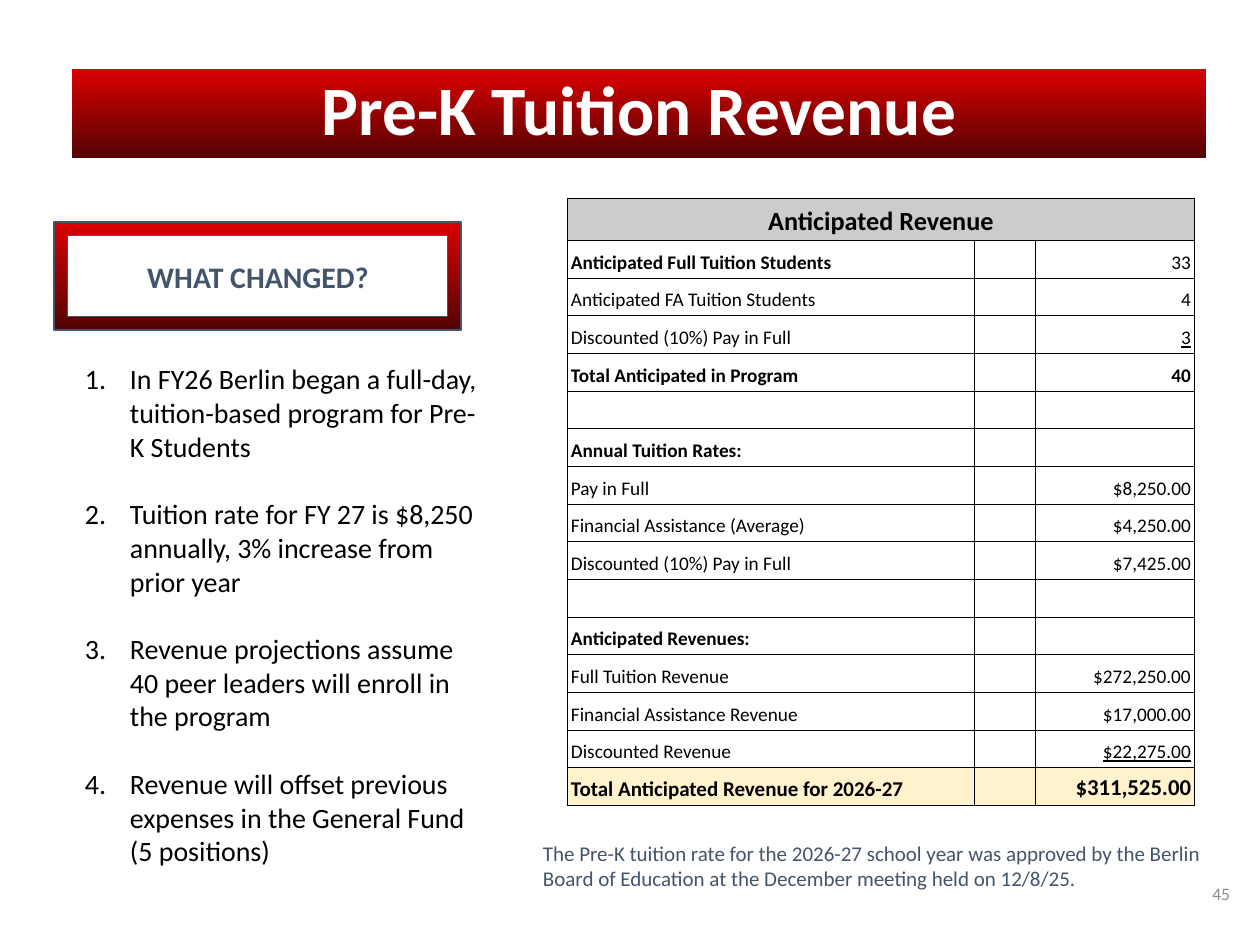
import pptx
import pptx.util
import pptx.dml.color
import pptx.enum.shapes
import pptx.enum.text
import pptx.oxml
import pptx.oxml.ns

PX = 914400 // 126  # EMU in one px
COLORS = {"red": "DB0000", "maroon": "540303", "white": "FFFFFF", "black": "000000",
          "slate": "44546A", "gray": "8C8C8C", "header": "CCCCCC", "total": "FFF2CC"}
NS = pptx.oxml.ns.nsdecls("a")
ALIGN = pptx.enum.text.PP_ALIGN
ANCHOR = pptx.enum.text.MSO_ANCHOR
Pt = pptx.util.Pt
rgb = pptx.dml.color.RGBColor.from_string


def add_run(p, text, size, color, bold=False, underline=False):
    r = p.add_run()
    r.text = text
    r.font.name = "Calibri"
    r.font.size = Pt(size)
    r.font.bold = bold
    r.font.underline = underline
    r.font.color.rgb = rgb(COLORS[color])


def add_box(s, left, top, width, height, anchor=ANCHOR.TOP):
    tf = s.shapes.add_textbox(left * PX, top * PX, width * PX, height * PX).text_frame
    tf.word_wrap = True
    tf.vertical_anchor = anchor
    tf.margin_left = tf.margin_right = tf.margin_top = tf.margin_bottom = 13 * PX
    return tf


prs = pptx.Presentation()
prs.slide_width = 1260 * PX
prs.slide_height = 945 * PX
s = prs.slides.add_slide(prs.slide_layouts[5])

# Title
title = s.shapes.title
title.left, title.top, title.width, title.height = [v * PX for v in (72, 69, 1134, 89)]
tf = title.text_frame
tf.auto_size = pptx.enum.text.MSO_AUTO_SIZE.NONE
tf.vertical_anchor = ANCHOR.MIDDLE
p = tf.paragraphs[0]
p.alignment = ALIGN.CENTER
p.line_spacing = 0.9
add_run(p, "Pre-K Tuition Revenue", 39.6, "white", bold=True)

# Frame around the heading
frame = s.shapes.add_shape(pptx.enum.shapes.MSO_SHAPE.FRAME,
                           54 * PX, 222 * PX, 407 * PX, 108 * PX)
frame.shadow.inherit = False
frame.adjustments[0] = 0.125
frame.line.color.rgb = rgb(COLORS["slate"])
frame.line.width = Pt(0.75)

# Red gradient, top to bottom
for sp in (title, frame):
    sp.fill.gradient()
    sp.fill.gradient_angle = 270
    for stop, position, color in zip(sp.fill.gradient_stops, (0, 1), ("red", "maroon")):
        stop.position = position
        stop.color.rgb = rgb(COLORS[color])

# Heading
p = add_box(s, 72, 246, 372, 62).paragraphs[0]
p.alignment = ALIGN.CENTER
add_run(p, "WHAT CHANGED?", 17, "slate", bold=True)

# Numbered list
changes = [
    "In FY26 Berlin began a full-day, tuition-based program for Pre-K Students",
    "Tuition rate for FY 27 is $8,250 annually, 3% increase from prior year",
    "Revenue projections assume 40 peer leaders will enroll in the program",
    "Revenue will offset previous expenses in the General Fund (5 positions)",
]
tf = add_box(s, 54, 349, 440, 561)
for i, text in enumerate(changes):
    p = tf.add_paragraph() if i else tf.paragraphs[0]
    pPr = p._p.get_or_add_pPr()
    pPr.set("marL", str(63 * PX))
    pPr.set("indent", str(-45 * PX))
    for xml in (f'<a:buClr {NS}><a:srgbClr val="{COLORS["black"]}"/></a:buClr>',
                f'<a:buFont {NS} typeface="Calibri"/>',
                f'<a:buAutoNum {NS} type="arabicPeriod"/>'):
        pPr.append(pptx.oxml.parse_xml(xml))
    if i:
        p.space_before = Pt(19.5)
    add_run(p, text, 16, "black")

# Revenue table: label, value, label bold, value bold, value underlined
rows = [
    ("Anticipated Full Tuition Students", "33", True, False, False),
    ("Anticipated FA Tuition Students", "4", False, False, False),
    ("Discounted (10%) Pay in Full", "3", False, False, True),
    ("Total Anticipated in Program", "40", True, True, False),
    ("", "", False, False, False),
    ("Annual Tuition Rates:", "", True, False, False),
    ("Pay in Full", "$8,250.00", False, False, False),
    ("Financial Assistance (Average)", "$4,250.00", False, False, False),
    ("Discounted (10%) Pay in Full", "$7,425.00", False, False, False),
    ("", "", False, False, False),
    ("Anticipated Revenues:", "", True, False, False),
    ("Full Tuition Revenue", "$272,250.00", False, False, False),
    ("Financial Assistance Revenue", "$17,000.00", False, False, False),
    ("Discounted Revenue", "$22,275.00", False, False, True),
    ("Total Anticipated Revenue for 2026-27", "$311,525.00", True, True, False),
]
last = len(rows)
edges = [round(i * 565 / last) for i in range(last + 1)]
heights = [41] + [b - a for a, b in zip(edges, edges[1:])]
table = s.shapes.add_table(last + 1, 3, 567 * PX, 198 * PX, 628 * PX, sum(heights) * PX).table
table.first_row = False
table.horz_banding = False
for column, width in zip(table.columns, (407, 62, 159)):
    column.width = width * PX
for row, height in zip(table.rows, heights):
    row.height = height * PX
table.cell(0, 0).merge(table.cell(0, 2))

# Cell text
p = table.cell(0, 0).text_frame.paragraphs[0]
p.alignment = ALIGN.CENTER
add_run(p, "Anticipated Revenue", 15, "black", bold=True)
for i, (label, value, label_bold, value_bold, underline) in enumerate(rows, 1):
    label_size, value_size = (12, 13) if i == last else (11, 11)
    if label:
        add_run(table.cell(i, 0).text_frame.paragraphs[0], label, label_size, "black", label_bold)
    if value:
        p = table.cell(i, 2).text_frame.paragraphs[0]
        p.alignment = ALIGN.RIGHT
        add_run(p, value, value_size, "black", value_bold, underline)

# Cell fills, margins and borders
for i in range(last + 1):
    for j in range(3):
        cell = table.cell(i, j)
        cell.vertical_anchor = ANCHOR.BOTTOM
        cell.margin_left = cell.margin_right = 4 * PX
        cell.margin_top = cell.margin_bottom = 3 * PX
        p = cell.text_frame.paragraphs[0]
        p.line_spacing = 1.15
        if not p.runs:
            p._p.get_or_add_endParaRPr().set("sz", "1100")
        tcPr = cell._tc.get_or_add_tcPr()
        for side in ("lnL", "lnR", "lnT", "lnB"):
            tcPr.append(pptx.oxml.parse_xml(
                f'<a:{side} {NS} w="7620"><a:solidFill><a:srgbClr val="{COLORS["black"]}"/>'
                f'</a:solidFill></a:{side}>'))
        if i in (0, last):
            cell.fill.solid()
            cell.fill.fore_color.rgb = rgb(COLORS["total" if i else "header"])
        else:
            cell.fill.background()

# Note below the table
tf = add_box(s, 530, 821, 702, 89, ANCHOR.MIDDLE)
add_run(tf.paragraphs[0], "The Pre-K tuition rate for the 2026-27 school year was approved by the "
        "Berlin Board of Education at the December meeting held on 12/8/25.", 12, "slate")

# Page number
p = add_box(s, 1168, 857, 75, 72, ANCHOR.MIDDLE).paragraphs[0]
p.alignment = ALIGN.RIGHT
add_run(p, "45", 10, "gray")

prs.save("out.pptx")
